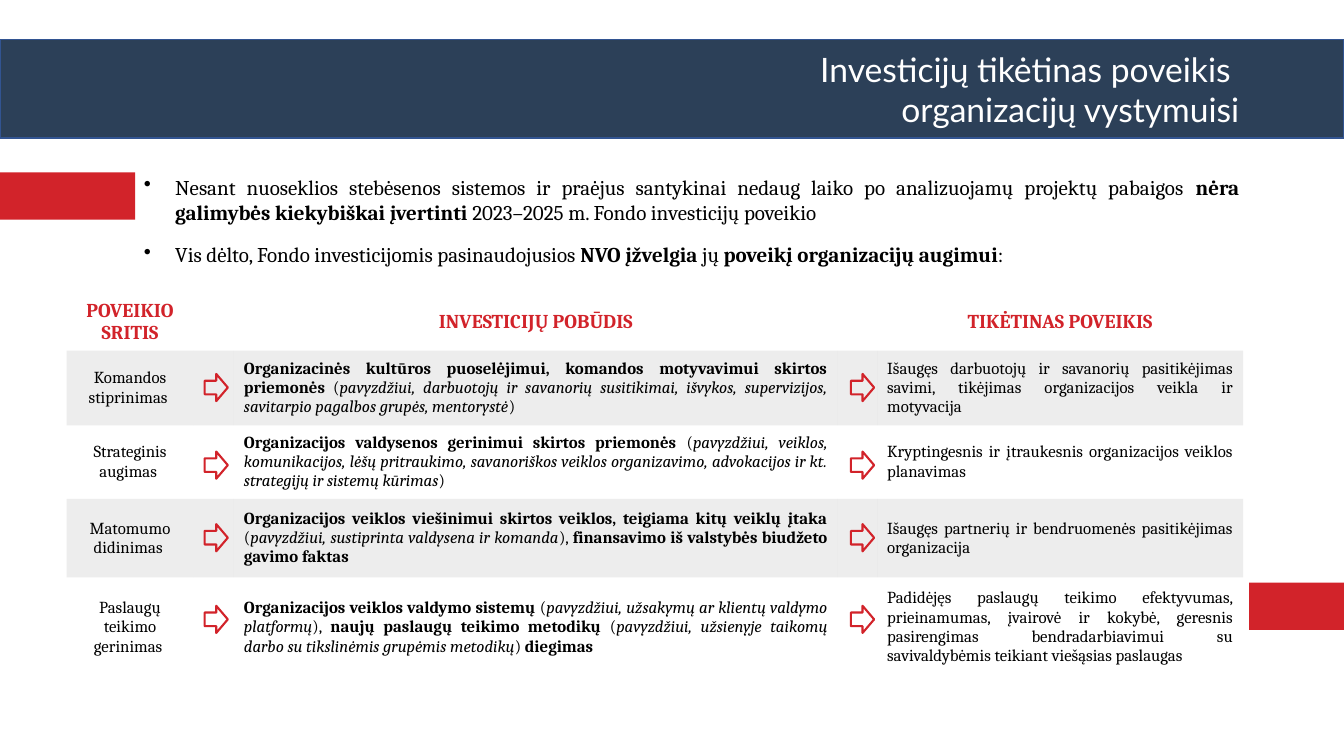
import pptx
import pptx.util
import pptx.dml.color
import pptx.enum.shapes
import pptx.enum.text
import lxml.etree
from pptx.util import Inches, Pt

ALIGN = pptx.enum.text.PP_ALIGN
SHAPE = pptx.enum.shapes.MSO_SHAPE
NAVY, RED, GREY = "2C4058", "D2232A", "A5A5A5"
BLACK, WHITE = "000000", "FFFFFF"


def color(value):
    return pptx.dml.color.RGBColor.from_string(value)


def write(paragraph, parts, size, ink, align, font="Cambria"):
    paragraph.alignment = align
    for text, style in parts:
        run = paragraph.add_run()
        run.text = text
        run.font.name = font
        run.font.size = Pt(size)
        run.font.color.rgb = color(ink)
        run.font.bold = style == "b"
        run.font.italic = style == "i"


prs = pptx.Presentation()
prs.slide_width = Inches(13.33)
prs.slide_height = Inches(7.5)
slide = prs.slides.add_slide(prs.slide_layouts[6])

blocks = []
for left, top, width, height, fill in [
    (0, 0.39, 13.33, 0.98, NAVY),
    (2.89, 0.48, 9.5, 0.71, NAVY),
    (0, 1.71, 1.34, 0.47, RED),
    (12.39, 5.78, 0.94, 0.47, RED),
]:
    block = slide.shapes.add_shape(
        SHAPE.RECTANGLE, Inches(left), Inches(top), Inches(width), Inches(height))
    block.shadow.inherit = False
    block.fill.solid()
    block.fill.fore_color.rgb = color(fill)
    block.line.fill.background()
    blocks.append(block)

banner, title = blocks[:2]
banner.line.color.rgb = color("325491")
banner.line.width = Pt(1)

heading = title.text_frame
heading.word_wrap = True
heading.vertical_anchor = pptx.enum.text.MSO_ANCHOR.TOP
for index, line in enumerate(["Investicijų tikėtinas poveikis ", "organizacijų vystymuisi"]):
    paragraph = heading.add_paragraph() if index else heading.paragraphs[0]
    write(paragraph, [(line, "")], 24, WHITE, ALIGN.RIGHT, "Lato")
    paragraph.line_spacing = 0.9
    paragraph.space_after = Pt(3)

findings = [
    [("Nesant nuoseklios stebėsenos sistemos ir praėjus santykinai nedaug laiko po "
      "analizuojamų projektų pabaigos ", ""),
     ("nėra galimybės kiekybiškai įvertinti ", "b"),
     ("2023–2025 m. Fondo investicijų poveikio", "")],
    [("Vis dėlto, Fondo investicijomis pasinaudojusios ", ""),
     ("NVO įžvelgia ", "b"), ("jų", ""),
     (" poveikį organizacijų augimui", "b"), (":", "")],
]
intro = slide.shapes.add_textbox(
    Inches(1.33), Inches(1.68), Inches(11.06), Inches(1.03)).text_frame
intro.word_wrap = True
for index, finding in enumerate(findings):
    paragraph = intro.add_paragraph() if index else intro.paragraphs[0]
    properties = paragraph._p.get_or_add_pPr()
    properties.set("marL", str(Inches(0.31)))
    properties.set("indent", str(-Inches(0.31)))
    bullet = lxml.etree.SubElement(properties, pptx.oxml.ns.qn("a:buChar"))
    bullet.set("char", "•")
    write(paragraph, finding, 15, BLACK, ALIGN.JUSTIFY)
    paragraph.space_after = Pt(6)
    if index:
        paragraph.space_before = Pt(6)

headers = ["POVEIKIO SRITIS", "INVESTICIJŲ POBŪDIS", "TIKĖTINAS POVEIKIS"]
impacts = [
    ("Komandos stiprinimas ",
     [("Organizacinės kultūros puoselėjimui, komandos motyvavimui skirtos priemonės ", "b"),
      ("(", ""),
      ("pavyzdžiui, darbuotojų ir savanorių susitikimai, išvykos, supervizijos, "
       "savitarpio pagalbos grupės, mentorystė", "i"),
      (")", "")],
     "Išaugęs darbuotojų ir savanorių pasitikėjimas savimi, tikėjimas organizacijos "
     "veikla ir motyvacija"),
    ("Strateginis augimas ",
     [("Organizacijos valdysenos gerinimui skirtos priemonės ", "b"),
      ("(", ""),
      ("pavyzdžiui, veiklos, komunikacijos, lėšų pritraukimo, savanoriškos veiklos "
       "organizavimo, advokacijos ir kt. strategijų ir sistemų kūrimas", "i"),
      (")", "")],
     "Kryptingesnis ir įtraukesnis organizacijos veiklos planavimas"),
    ("Matomumo didinimas ",
     [("Organizacijos veiklos viešinimui skirtos veiklos, teigiama kitų veiklų įtaka ", "b"),
      ("(", ""), ("pavyzdžiui, sustiprinta valdysena ir komanda", "i"), ("), ", ""),
      ("finansavimo iš valstybės biudžeto gavimo faktas", "b")],
     "Išaugęs partnerių ir bendruomenės pasitikėjimas organizacija"),
    ("Paslaugų teikimo gerinimas ",
     [("Organizacijos veiklos valdymo sistemų ", "b"),
      ("(", ""), ("pavyzdžiui, užsakymų ar klientų valdymo platformų", "i"), ("), ", ""),
      ("naujų paslaugų teikimo metodikų ", "b"),
      ("(", ""),
      ("pavyzdžiui, užsienyje taikomų darbo su tikslinėmis grupėmis metodikų", "i"),
      (") ", ""), ("diegimas", "b")],
     "Padidėjęs paslaugų teikimo efektyvumas, prieinamumas, įvairovė ir kokybė, geresnis "
     "pasirengimas bendradarbiavimui su savivaldybėmis teikiant viešąsias paslaugas"),
]
table = slide.shapes.add_table(
    5, 5, Inches(0.66), Inches(2.91), Inches(11.67), Inches(3.81)).table
table.first_row = False
table.horz_banding = False
table._tbl.tblPr[0].text = "{2D5ABB26-0587-4C30-8999-92F81FD0307C}"
for column, width in zip(table.columns, [1.26, 0.4, 5.99, 0.39, 3.63]):
    column.width = Inches(width)
for row, height in zip(table.rows, [0.57, 0.74, 0.73, 0.78, 0.99]):
    row.height = Inches(height)

for index, row in enumerate(table.rows):
    for cell in row.cells:
        cell.vertical_anchor = pptx.enum.text.MSO_ANCHOR.MIDDLE
        if index % 2:
            cell.fill.solid()
            cell.fill.fore_color.rgb = color(GREY)
            tint = cell._tc.tcPr.find(".//" + pptx.oxml.ns.qn("a:srgbClr"))
            lxml.etree.SubElement(tint, pptx.oxml.ns.qn("a:alpha")).set("val", "20000")
        else:
            cell.fill.background()

for index, header in enumerate(headers):
    write(table.cell(0, index * 2).text_frame.paragraphs[0],
          [(header, "b")], 14, RED, ALIGN.CENTER)
for index, (area, investment, effect) in enumerate(impacts, 1):
    for column, parts, align in [
        (0, [(area, "")], ALIGN.CENTER),
        (2, investment, ALIGN.JUSTIFY),
        (4, [(effect, "")], ALIGN.JUSTIFY),
    ]:
        write(table.cell(index, column).text_frame.paragraphs[0], parts, 12, BLACK, align)

for left in [2.03, 8.44]:
    for top in [3.71, 4.48, 5.2, 6.01]:
        arrow = slide.shapes.add_shape(
            SHAPE.RIGHT_ARROW, Inches(left), Inches(top), Inches(0.23), Inches(0.27))
        arrow.shadow.inherit = False
        arrow.fill.background()
        arrow.line.color.rgb = color(RED)
        arrow.line.width = Pt(1.5)

prs.save("out.pptx")
